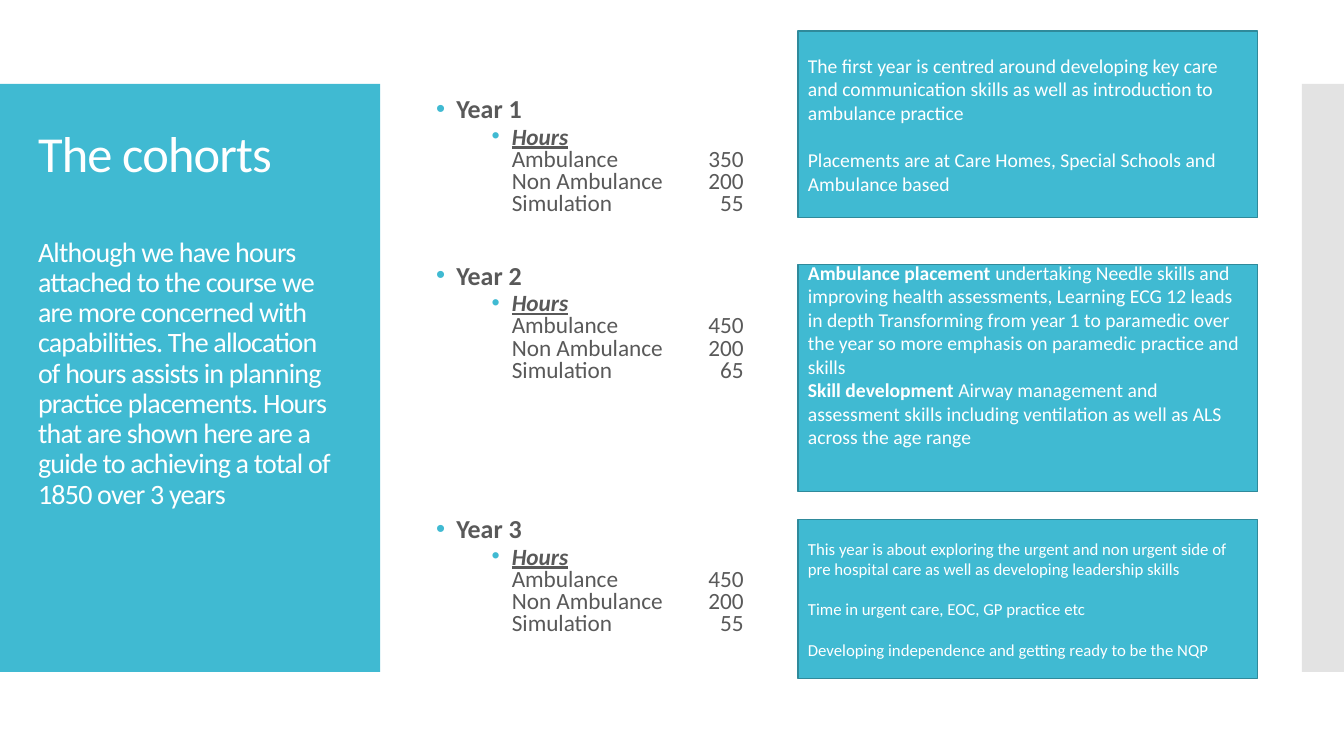
import pptx
import pptx.util
import pptx.dml.color
import pptx.enum.shapes
import pptx.enum.text
import pptx.oxml.ns
import lxml.etree

Pt = pptx.util.Pt
Inches = pptx.util.Inches
middle = pptx.enum.text.MSO_ANCHOR.MIDDLE
tint = {"teal": "40BAD2", "edge": "2F8A9B", "grey": "C8C8C8", "text": "595959", "white": "FFFFFF"}
rgb = {name: pptx.dml.color.RGBColor.from_string(code) for name, code in tint.items()}

deck = pptx.Presentation()
deck.slide_width = Inches(13.33)
deck.slide_height = Inches(7.5)
slide = deck.slides.add_slide(deck.slide_layouts[6])
unit = deck.slide_width / 32


def style(para, size, color, bold=False):
    for run in para.runs:
        run.font.name = "Calibri"
        run.font.size = Pt(size)
        run.font.bold = bold
        run.font.color.rgb = rgb[color]


def node(parent, tag, **attrs):
    item = lxml.etree.SubElement(parent, pptx.oxml.ns.qn(tag))
    for key, value in attrs.items():
        item.set(key, str(value))
    return item


panels = [
    (0, 2, 9.05, 14, "teal"),
    (31, 2, 1, 14, "grey"),
    (19, 0.74, 10.95, 4.44, "teal"),
    (19, 6.29, 10.95, 5.42, "teal"),
    (19, 12.38, 10.95, 3.77, "teal"),
]
cards = []
for index, (*grid, color) in enumerate(panels):
    panel = slide.shapes.add_shape(
        pptx.enum.shapes.MSO_SHAPE.RECTANGLE, *[round(unit * step) for step in grid])
    panel.shadow.inherit = False
    panel.fill.solid()
    panel.fill.fore_color.rgb = rgb[color]
    if color == "grey":
        shade = panel.fill._xPr.find(".//" + pptx.oxml.ns.qn("a:srgbClr"))
        node(shade, "a:alpha", val=50000)
    if index < 2:
        panel.line.fill.background()
    else:
        panel.line.color.rgb = rgb["edge"]
        panel.line.width = Pt(0.85)
        cards.append(panel)

boxes = []
for grid in [(0.67, 2.95, 7.73, 12.07), (10.15, 1.82, 8.85, 13.87)]:
    box = slide.shapes.add_textbox(*[round(unit * step) for step in grid])
    box.text_frame.word_wrap = True
    boxes.append(box.text_frame)
intro, hours = boxes

intro.text = (
    "The cohorts\n"
    "Although we have hours attached to the course we are more concerned with "
    "capabilities. The allocation of hours assists in planning practice placements. "
    "Hours that are shown here are a guide to achieving a total of 1850 over 3 years"
)
for para, size, gap in zip(intro.paragraphs, (36, 20), (0, 39)):
    para.line_spacing = 0.9
    para.space_before = Pt(gap)
    style(para, size, "white")
    for run in para.runs:
        run.font._element.set("spc", "-60")

years = [
    ("Year 1", 0, (350, 200, 55)),
    ("Year 2", 35, (450, 200, 65)),
    ("Year 3", 97, (450, 200, 55)),
]
kinds = ("Ambulance", "Non Ambulance", "Simulation")
lines = []
for year, gap, counts in years:
    lines += [(year, gap, 0.2), ("Hours", 2.5, 0.75)]
    lines += [(f"\t{kind}\t{count}", 0, 0) for kind, count in zip(kinds, counts)]

hours.vertical_anchor = middle
hours.text = "\n".join(line[0] for line in lines)
for para, (words, gap, indent) in zip(hours.paragraphs, lines):
    para.line_spacing = 0.8
    para.space_before = Pt(gap)
    props = para._p.get_or_add_pPr()
    if indent:
        props.set("marL", str(Inches(indent)))
        props.set("indent", str(Inches(-0.2)))
        node(node(props, "a:buClr"), "a:srgbClr", val=tint["teal"])
        node(props, "a:buFont", typeface="Arial")
        node(props, "a:buChar", char="•")
    else:
        tabs = node(props, "a:tabLst")
        node(tabs, "a:tab", pos=Inches(0.75), algn="l")
        node(tabs, "a:tab", pos=Inches(3.05), algn="r")
    style(para, 18.5 if indent == 0.2 else 16.6, "text", indent > 0)
    if words == "Hours":
        for run in para.runs:
            run.font.italic = True
            run.font.underline = True

notes = [
    (14, 17, 0.05, [
        ("", "The first year is centred around developing key care and communication "
             "skills as well as introduction to ambulance practice"),
        ("", "Placements are at Care Homes, Special Schools and Ambulance based"),
    ]),
    (14, 0, 0.51, [
        ("Ambulance placement ",
         "undertaking Needle skills and improving health assessments, Learning ECG 12 "
         "leads in depth Transforming from year 1 to paramedic over the year so more "
         "emphasis on paramedic practice and skills"),
        ("Skill development ",
         "Airway management and assessment skills including ventilation as well as ALS "
         "across the age range"),
    ]),
    (12, 14.5, 0.05, [
        ("", "This year is about exploring the urgent and non urgent side of pre hospital "
             "care as well as developing leadership skills"),
        ("", "Time in urgent care, EOC, GP practice etc"),
        ("", "Developing independence and getting ready to be the NQP"),
    ]),
]
for card, (size, gap, inset, parts) in zip(cards, notes):
    frame = card.text_frame
    frame.word_wrap = True
    frame.vertical_anchor = middle
    frame.margin_bottom = Inches(inset)
    for index, (lead, words) in enumerate(parts):
        para = frame.add_paragraph() if index else frame.paragraphs[0]
        para.alignment = pptx.enum.text.PP_ALIGN.LEFT
        para.space_before = Pt(gap if index else 0)
        para.text = lead or words
        if lead:
            para.add_run().text = words
        style(para, size, "white")
        para.runs[0].font.bold = bool(lead)

deck.save("out.pptx")
